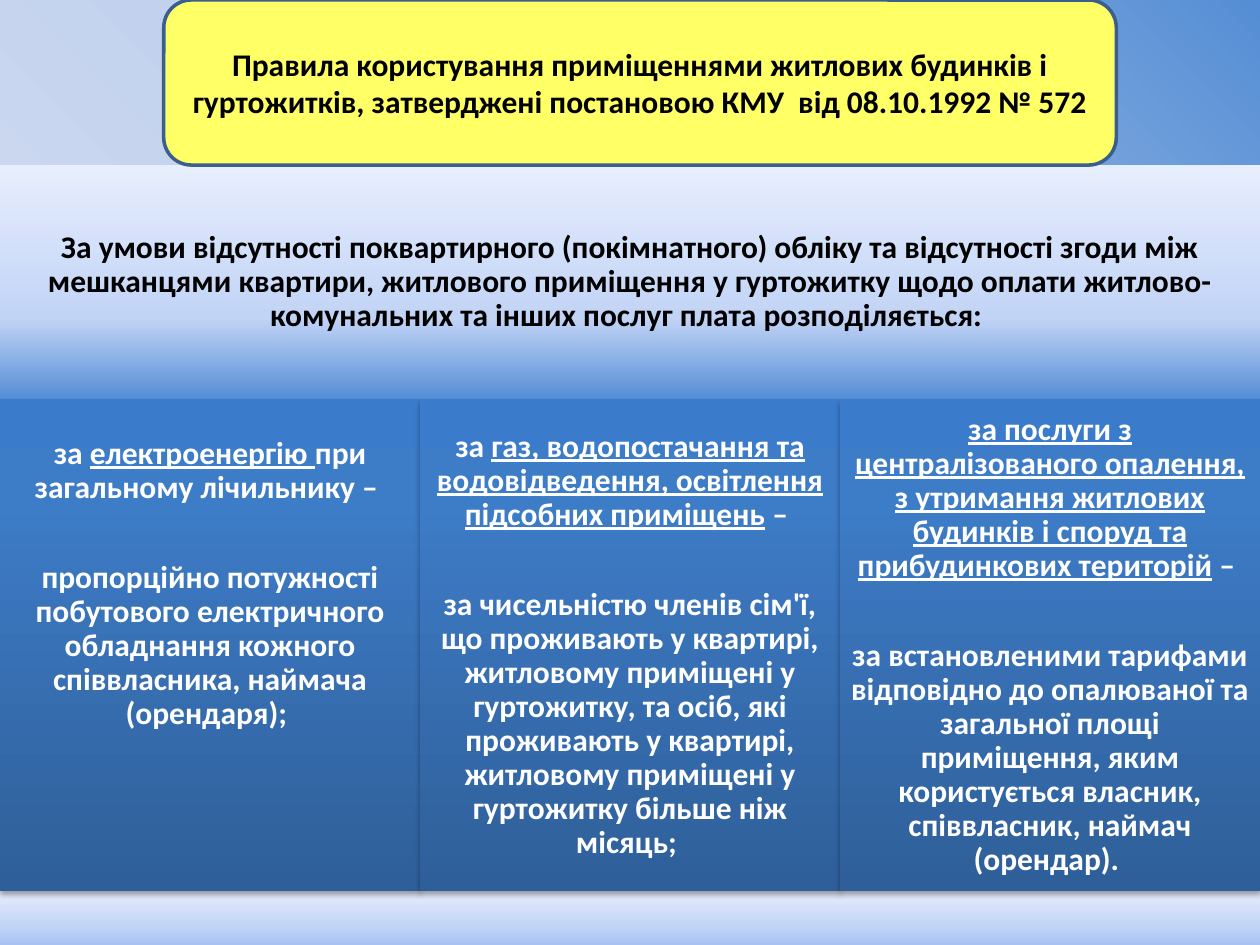
from copy import deepcopy

from lxml import etree
from pptx import Presentation
from pptx.dml.color import RGBColor
from pptx.enum.shapes import MSO_SHAPE
from pptx.enum.text import MSO_ANCHOR, PP_ALIGN
from pptx.oxml import parse_xml
from pptx.util import Inches, Pt

BLACK = RGBColor(0x00, 0x00, 0x00)
WHITE = RGBColor(0xFF, 0xFF, 0xFF)
YELLOW = RGBColor(0xFF, 0xFF, 0x66)
OUTLINE = RGBColor(0x3A, 0x5F, 0x8C)
SKY = RGBColor(0x55, 0x8E, 0xD5)
MIST = RGBColor(0xC2, 0xD1, 0xED)
HAZE = RGBColor(0xE1, 0xE8, 0xF5)
PALE = RGBColor(0xC2, 0xD4, 0xF6)
PALEST = RGBColor(0xE7, 0xEE, 0xFD)
PERIWINKLE = RGBColor(0xA8, 0xC2, 0xF4)
NAVY = RGBColor(0x2F, 0x5F, 0x99)
BLUE = RGBColor(0x3D, 0x7C, 0xC7)
BRIGHT = RGBColor(0x3A, 0x7C, 0xCB)

DRAWING = "http://schemas.openxmlformats.org/drawingml/2006/main"
SHADOW = (
    f'<a:effectLst xmlns:a="{DRAWING}">'
    '<a:outerShdw blurRad="39370" dist="22860" dir="5400000" rotWithShape="0">'
    '<a:srgbClr val="000000"><a:alpha val="35000"/></a:srgbClr>'
    "</a:outerShdw></a:effectLst>"
)


def set_gradient(owner, fill, stops, angle=90):
    """Fill with (position, colour) stops; the angle runs counter-clockwise."""
    fill.gradient()
    fill.gradient_angle = angle
    stop_list = owner.element.xpath(".//a:gsLst")[0]
    while len(stop_list) < len(stops):
        stop_list.append(deepcopy(stop_list[0]))
    for stop, (position, colour) in zip(fill.gradient_stops, stops):
        stop.position = position
        stop.color.rgb = colour


def write_text(shape, paragraphs, colour, spacing=0.9, margin=0.07, bottom=0.07):
    """Write bold centred paragraphs, each a list of (text, underlined)."""
    frame = shape.text_frame
    settings = {
        "word_wrap": True,
        "vertical_anchor": MSO_ANCHOR.MIDDLE,
        "margin_left": Inches(margin),
        "margin_right": Inches(margin),
        "margin_top": Inches(0.07),
        "margin_bottom": Inches(bottom),
    }
    for name, value in settings.items():
        setattr(frame, name, value)
    for index, spans in enumerate(paragraphs):
        para = frame.add_paragraph() if index else frame.paragraphs[0]
        para.alignment = PP_ALIGN.CENTER
        para.line_spacing = spacing
        para.space_before = Pt(32 if index else 0)
        for text, underlined in spans:
            span = para.add_run()
            span.text = text
            font = {"name": "Calibri", "size": Pt(18), "bold": True, "underline": underlined}
            for name, value in font.items():
                setattr(span.font, name, value)
            span.font.color.rgb = colour


deck = Presentation()
deck.slide_width = Inches(10)
deck.slide_height = Inches(7.5)
page = deck.slides.add_slide(deck.slide_layouts[6])
set_gradient(page, page.background.fill, [(0, SKY), (0.5, MIST), (1, HAZE)], 225)

# Condition band and bottom strip
bands = []
for top, height, base in [(1.31, 1.86, SKY), (7.07, 0.43, PERIWINKLE)]:
    band = page.shapes.add_shape(
        MSO_SHAPE.RECTANGLE, 0, Inches(top), Inches(10), Inches(height)
    )
    band.shadow.inherit = False
    band.line.fill.background()
    set_gradient(band, band.fill, [(0, base), (0.35, PALE), (1, PALEST)])
    bands.append(band)
condition = (
    "За умови відсутності поквартирного (покімнатного) обліку та відсутності згоди "
    "між мешканцями квартири, житлового приміщення у гуртожитку щодо оплати "
    "житлово-комунальних та інших послуг плата розподіляється: "
)
write_text(bands[0], [[(condition, False)]], BLACK)

# Three columns: service, then how its cost is shared; last value is the bottom inset
columns = [
    (
        [("за ", False), ("електроенергію ", True), ("при загальному лічильнику – ", False)],
        "пропорційно потужності побутового електричного обладнання кожного "
        "співвласника, наймача (орендаря); ",
        1.04,
    ),
    (
        [
            ("за ", False),
            ("газ, водопостачання та водовідведення, освітлення підсобних приміщень", True),
            (" – ", False),
        ],
        "за чисельністю членів сім'ї, що проживають у квартирі, житловому приміщені "
        "у гуртожитку, та осіб, які проживають у квартирі, житловому приміщені "
        "у гуртожитку більше ніж місяць; ",
        0.07,
    ),
    (
        [
            (
                "за послуги з централізованого опалення, з утримання житлових "
                "будинків і споруд та прибудинкових територій",
                True,
            ),
            (" – ", False),
        ],
        "за встановленими тарифами відповідно до опалюваної та загальної площі "
        "приміщення, яким користується власник, співвласник, наймач (орендар). ",
        0.07,
    ),
]
column_width = Inches(10 / len(columns))
for index, (service, rule, bottom) in enumerate(columns):
    column = page.shapes.add_shape(
        MSO_SHAPE.RECTANGLE, index * column_width, Inches(3.17), column_width, Inches(3.9)
    )
    column.line.fill.background()
    set_gradient(column, column.fill, [(0, NAVY), (0.8, BLUE), (1, BRIGHT)])
    column.element.spPr.append(parse_xml(SHADOW))
    write_text(column, [service, [(rule, False)]], WHITE, bottom=bottom)

# Title plate
title = page.shapes.add_shape(
    MSO_SHAPE.ROUNDED_RECTANGLE, Inches(1.3), 0, Inches(7.56), Inches(1.31)
)
title.shadow.inherit = False
title.fill.solid()
title.fill.fore_color.rgb = YELLOW
title.line.color.rgb = OUTLINE
title.line.width = Pt(2)
heading = (
    "Правила користування приміщеннями житлових будинків і гуртожитків, "
    "затверджені постановою КМУ  від 08.10.1992 № 572"
)
write_text(title, [[(heading, False)]], BLACK, spacing=1.0, margin=0.1)

deck.save("out.pptx")
